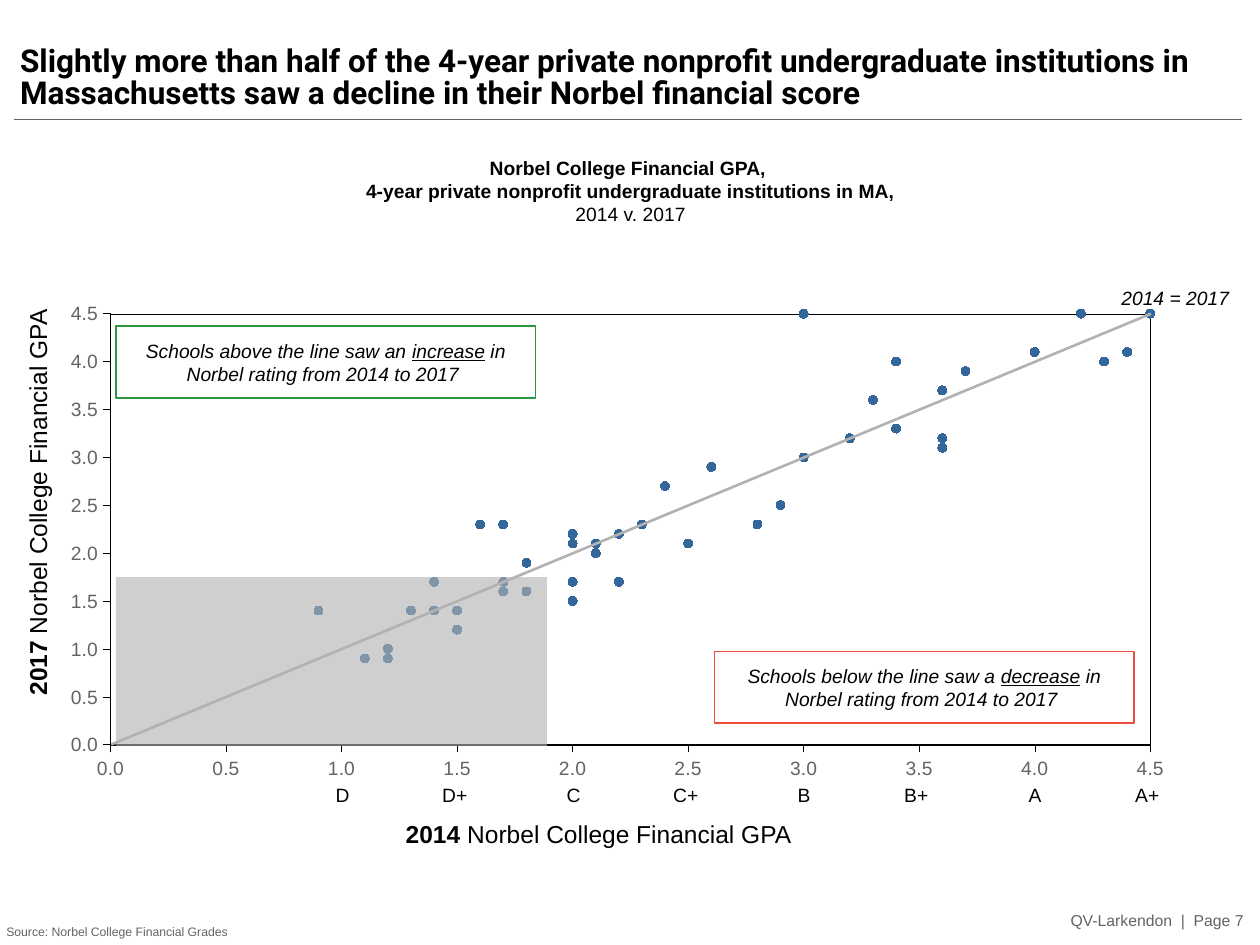
from typing import NamedTuple

from lxml.etree import SubElement
from pptx import Presentation
from pptx.chart.data import CategoryChartData, XyChartData
from pptx.dml.color import RGBColor
from pptx.enum.chart import XL_CHART_TYPE as ChartType, XL_MARKER_STYLE as Marker
from pptx.enum.chart import XL_TICK_LABEL_POSITION as LabelPosition, XL_TICK_MARK as TickMark
from pptx.enum.shapes import MSO_CONNECTOR as Connector, MSO_SHAPE as Shape
from pptx.enum.text import MSO_ANCHOR as Anchor, MSO_AUTO_SIZE as AutoSize, PP_ALIGN as Align
from pptx.oxml import parse_xml
from pptx.oxml.ns import nsdecls, qn
from pptx.util import Inches, Pt

COLORS = {"text": "000000", "muted": "646464", "point": "336699", "gray": "B2B2B2",
          "increase": "2C973E", "decrease": "F04C3E"}
GRADES = ["D", "D+", "C", "C+", "B", "B+", "A", "A+"]
AXIS_MAX, AXIS_STEP = 4.5, 0.5
POINTS = [
    (1.3, 1.4), (4.5, 4.5), (1.5, 1.2), (2.1, 2), (3.3, 3.6), (2.8, 2.3), (1.1, 0.9),
    (2.6, 2.9), (3.4, 3.3), (1.7, 1.6), (4, 4.1), (3, 3), (3.6, 3.7), (2, 1.5), (3.6, 3.2),
    (1.7, 2.3), (4.2, 4.5), (2.3, 2.3), (1.8, 1.9), (2.3, 2.3), (1.4, 1.4), (2, 2.1),
    (1.7, 1.7), (1.6, 2.3), (4.5, 4.5), (2.2, 1.7), (2.2, 2.2), (4.5, 4.5), (3.2, 3.2),
    (1.4, 1.7), (4.3, 4), (1.2, 1), (1.2, 0.9), (2, 1.7), (2.4, 2.7), (0.9, 1.4), (2.1, 2.1),
    (3, 4.5), (2, 2.2), (2.9, 2.5), (2, 2.2), (3.7, 3.9), (4.4, 4.1), (4.5, 4.5), (2.5, 2.1),
    (1.8, 1.6), (3.4, 4), (1.5, 1.4), (4.5, 4.5), (3.6, 3.1)]


class Box(NamedTuple):
    """A rectangle in inches."""
    left: float
    top: float
    width: float
    height: float

    def inside(self, left, top, width, height):
        """Return a box offset from this box's corner."""
        return Box(self.left + left, self.top + top, width, height)

    def lengths(self):
        """Return the four lengths as python-pptx units."""
        return [Inches(length) for length in self]


def rgb(name):
    """Look up a colour by name."""
    return RGBColor.from_string(COLORS[name])


def set_font(font, color="text", **formats):
    """Apply the base font and any extra format values."""
    for name, value in {"name": "Arial", "size": Pt(11), **formats}.items():
        setattr(font, name, value)
    font.color.rgb = rgb(color)


def write(shape, paragraphs, align=Align.LEFT, anchor=Anchor.TOP, insets=(0.05, 0, 0, 0),
          wrap=True, **formats):
    """Fill a shape with paragraphs, each a list of (text, format) runs."""
    frame = shape.text_frame
    sides = ("margin_left", "margin_top", "margin_right", "margin_bottom")
    settings = {"auto_size": AutoSize.NONE, "word_wrap": wrap, "vertical_anchor": anchor,
                **dict(zip(sides, map(Inches, insets)))}
    for name, value in settings.items():
        setattr(frame, name, value)
    for index, runs in enumerate(paragraphs):
        paragraph = frame.add_paragraph() if index else frame.paragraphs[0]
        paragraph.alignment = align
        for text, extra in runs:
            run = paragraph.add_run()
            run.text = text
            set_font(run.font, **{**formats, **extra})
    return shape


def add_label(slide, box, paragraphs, **formats):
    """Add a text box."""
    return write(slide.shapes.add_textbox(*box.lengths()), paragraphs, **formats)


def place(shape, box):
    """Move a placeholder to a box."""
    for name, value in zip(("left", "top", "width", "height"), box.lengths()):
        setattr(shape, name, value)
    return shape


def add_header(slide, box):
    """Place the title over its rule."""
    text = ("Slightly more than half of the 4-year private nonprofit undergraduate institutions "
            "in Massachusetts saw a decline in their Norbel financial score")
    title = place(slide.shapes.title, box.inside(0, 0, box.width, 0.87))
    write(title, [[(text, {})]], anchor=Anchor.BOTTOM, name="Roboto", size=Pt(18), bold=True)
    title.text_frame.paragraphs[0].line_spacing = 0.85
    left, bottom, right = map(Inches, (box.left, box.top + box.height, box.left + box.width))
    rule = slide.shapes.add_connector(Connector.STRAIGHT, left, bottom, right, bottom)
    rule.line.color.rgb, rule.line.width = rgb("muted"), Pt(0.75)
    SubElement(rule._element.spPr, qn("a:effectLst"))


def add_footer(slide, box):
    """Place the source note and the page label."""
    source = place(slide.placeholders[1], box.inside(0, 0, 7.25, box.height))
    write(source, [[("Source: Norbel College Financial Grades", {})]], anchor=Anchor.BOTTOM,
          insets=(0.05, 0, 0, 0.05), size=Pt(7), color="muted")
    properties = source.text_frame.paragraphs[0]._p.get_or_add_pPr()
    properties.set("marL", "0")
    properties.set("indent", "0")
    SubElement(properties, qn("a:buNone"))
    add_label(slide, box.inside(7.53, 0, 2.34, 0.22), [[("QV-Larkendon  |  Page 7", {})]],
              align=Align.RIGHT, anchor=Anchor.MIDDLE, insets=(0, 0, 0, 0),
              size=Pt(9), color="muted")


def add_chart(slide, kind, data, frame, plot):
    """Add a bare chart whose inner plot area covers the given box."""
    chart = slide.shapes.add_chart(kind, *frame.lengths(), data).chart
    chart.has_legend = chart.has_title = False
    set_font(chart.font, size=Pt(10))
    shares = {"x": (plot.left - frame.left) / frame.width,
              "y": (plot.top - frame.top) / frame.height,
              "w": plot.width / frame.width, "h": plot.height / frame.height}
    area = chart._chartSpace.chart.plotArea
    for layout in area.findall(qn("c:layout")):
        area.remove(layout)
    values = "".join(f'<c:{key} val="{share:.3f}"/>' for key, share in shares.items())
    area.insert(0, parse_xml(
        f'<c:layout {nsdecls("c")}><c:manualLayout><c:layoutTarget val="inner"/>'
        f'<c:xMode val="edge"/><c:yMode val="edge"/>{values}</c:manualLayout></c:layout>'))
    for axis in (chart.category_axis, chart.value_axis):
        axis.has_major_gridlines = False
        axis.format.line.color.rgb, axis.format.line.width = rgb("text"), Pt(0.25)
    return chart


def add_scatter(slide, plot):
    """Draw one point per school."""
    data = XyChartData()
    series = data.add_series("Series 1")
    for x, y in POINTS:
        series.add_data_point(x, y)
    frame = plot.inside(-0.46, -0.12, 8.97, 3.87)
    chart = add_chart(slide, ChartType.XY_SCATTER, data, frame, plot)
    chart.plots[0].vary_by_categories = False
    formats = {"minimum_scale": 0, "maximum_scale": AXIS_MAX, "major_unit": AXIS_STEP,
               "major_tick_mark": TickMark.OUTSIDE, "minor_tick_mark": TickMark.NONE}
    for axis in (chart.category_axis, chart.value_axis):
        for name, value in formats.items():
            setattr(axis, name, value)
        axis.tick_labels.number_format = '#,##0.0;"-"#,##0.0'
        axis.tick_labels.number_format_is_linked = False
        set_font(axis.tick_labels.font, color="muted")
    schools = chart.plots[0].series[0]
    schools.format.line.fill.background()
    schools.marker.style, schools.marker.size = Marker.CIRCLE, 5
    schools.marker.format.fill.solid()
    schools.marker.format.fill.fore_color.rgb = rgb("point")
    schools.marker.format.line.color.rgb = rgb("point")
    chart._chartSpace.chart.plotArea.append(parse_xml(
        f'<c:spPr {nsdecls("c", "a")}><a:noFill/><a:ln w="3175"><a:solidFill>'
        f'<a:srgbClr val="{COLORS["text"]}"/></a:solidFill></a:ln></c:spPr>'))


def add_equal_line(slide, plot):
    """Draw the diagonal where both years are equal."""
    data = CategoryChartData()
    data.categories = ["1", "2", "3"]
    data.add_series("Series 1", [0, 50, 100])
    frame = plot.inside(-0.09, -0.09, 8.43, 3.6)
    chart = add_chart(slide, ChartType.LINE, data, frame, plot)
    chart.category_axis.tick_label_position = LabelPosition.NONE
    chart.category_axis.major_tick_mark = TickMark.NONE
    axis = chart.value_axis
    axis.minimum_scale, axis.maximum_scale, axis.visible = 0, 100, False
    for crossing in axis._element.findall(qn("c:crossBetween")):
        axis._element.remove(crossing)
    axis._element.find(qn("c:crosses")).addnext(
        parse_xml(f'<c:crossBetween {nsdecls("c")} val="midCat"/>'))
    line = chart.plots[0].series[0]
    line.smooth = False
    line.format.line.color.rgb, line.format.line.width = rgb("gray"), Pt(1.5)


def add_callout(slide, box, side, change):
    """Add an outlined note on one side of the diagonal."""
    shape = slide.shapes.add_shape(Shape.RECTANGLE, *box.lengths())
    shape.shadow.inherit = False
    shape.fill.background()
    shape.line.color.rgb, shape.line.width = rgb(change), Pt(1)
    runs = [(f"Schools {side} the line saw an " if change == "increase"
             else f"Schools {side} the line saw a ", {}),
            (change, {"underline": True}), (" in Norbel rating from 2014 to 2017 ", {})]
    write(shape, [runs], align=Align.CENTER, anchor=Anchor.MIDDLE,
          insets=(0.1, 0.05, 0.1, 0.05), italic=True)


def add_low_zone(slide, box):
    """Shade the low-scoring corner."""
    zone = slide.shapes.add_shape(Shape.RECTANGLE, *box.lengths())
    zone.shadow.inherit = False
    zone.fill.solid()
    zone.fill.fore_color.rgb = rgb("gray")
    zone.line.fill.background()
    color = zone._element.spPr.find(qn("a:solidFill"))[0]
    SubElement(color, qn("a:alpha")).set("val", "62000")


def add_axis_names(slide, plot):
    """Name both axes, the diagonal and the letter grades."""
    bold = {"bold": True}
    name = "Norbel College Financial GPA"
    add_label(slide, plot.inside(2.29, 4.01, 3.25, 0.26),
              [[("2014", bold), (f" {name}", {})]], size=Pt(14))
    vertical = add_label(slide, plot.inside(-2.17, 1.35, 3.2, 0.26),
                         [[("2017 ", bold), (name, {})]], size=Pt(14))
    vertical.rotation = 270
    add_label(slide, plot.inside(7.97, -0.22, 1.14, 0.26), [[("2014 = 2017", {})]], italic=True)
    step = plot.width * AXIS_STEP / AXIS_MAX
    for tick, grade in enumerate(GRADES, start=2):
        offset = 0.03 + 0.07 * len(grade)
        add_label(slide, plot.inside(tick * step - offset, 3.73, 0.26, 0.27), [[(grade, {})]])


def add_subtitle(slide, box):
    """Place the chart's heading."""
    bold = {"bold": True}
    add_label(slide, box, [[("Norbel College Financial GPA, ", bold)],
                           [("4-year private nonprofit undergraduate institutions in MA,", bold)],
                           [("2014 v. 2017", {})]],
              align=Align.CENTER, anchor=Anchor.BOTTOM, insets=(0.05,) * 4, wrap=False)


def main():
    """Build and save the slide."""
    presentation = Presentation()
    presentation.slide_width, presentation.slide_height = Inches(10), Inches(7.5)
    slide = presentation.slides.add_slide(presentation.slide_layouts[1])
    plot = Box(0.88, 2.49, 8.25, 3.42)
    add_header(slide, Box(0.11, 0.01, 9.75, 0.94))
    add_footer(slide, Box(0, 7.19, 10, 0.31))
    add_scatter(slide, plot)
    add_equal_line(slide, plot)
    add_axis_names(slide, plot)
    add_subtitle(slide, Box(0.13, 1.58, 9.75, 0.26))
    add_callout(slide, plot.inside(0.04, 0.1, 3.33, 0.57), "above", "increase")
    add_callout(slide, plot.inside(4.79, 2.68, 3.33, 0.57), "below", "decrease")
    add_low_zone(slide, plot.inside(0.04, 2.09, 3.42, 1.34))
    presentation.save("out.pptx")


if __name__ == "__main__":
    main()
